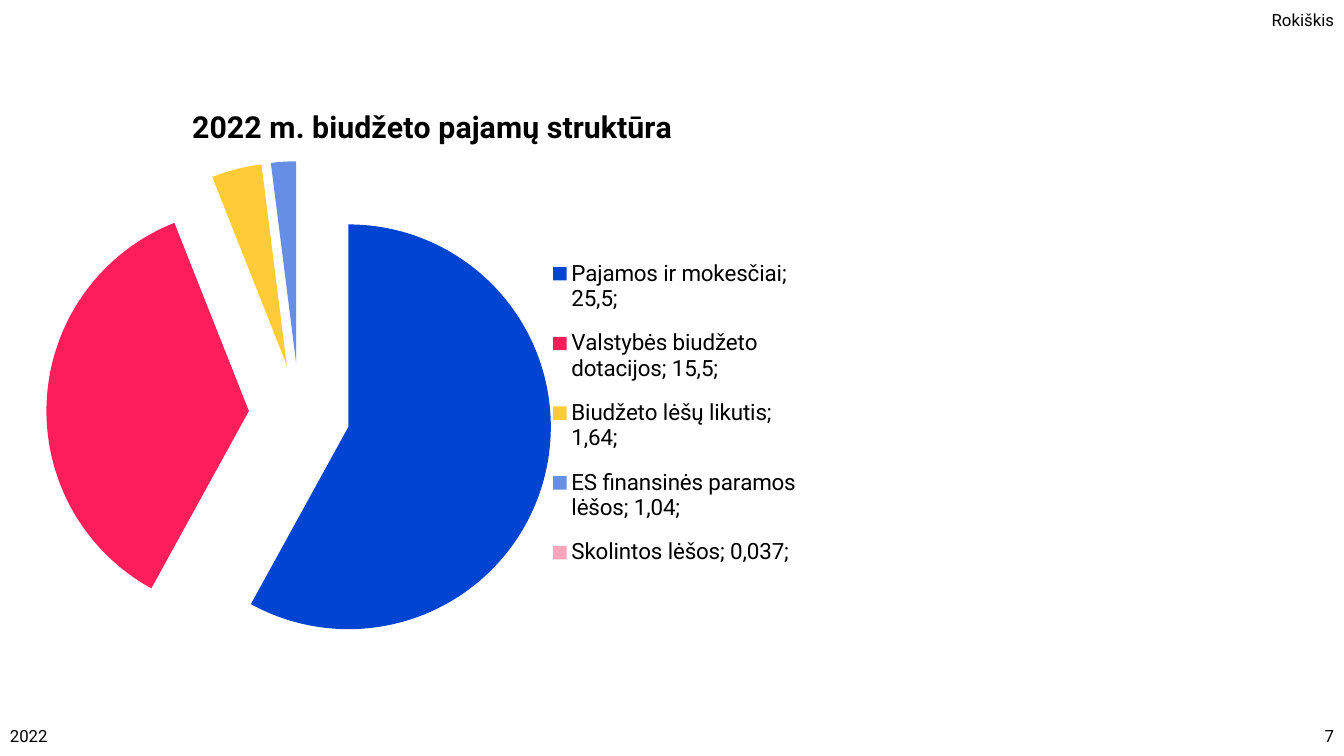
from dataclasses import dataclass

from lxml.etree import SubElement
from pptx import Presentation
from pptx.chart.chart import Chart
from pptx.chart.data import CategoryChartData
from pptx.dml.color import RGBColor
from pptx.enum.chart import XL_CHART_TYPE, XL_LEGEND_POSITION
from pptx.enum.text import MSO_ANCHOR, PP_ALIGN
from pptx.oxml.ns import qn
from pptx.slide import Slide
from pptx.util import Inches, Pt

COLORS = {
    "black": "000000",
    "blue": "0044D2",
    "red": "FF1D5A",
    "yellow": "FFCC37",
    "light_blue": "668EE4",
    "pink": "FFA4BD",
}
FONT = "Roboto"


@dataclass
class Income:
    label: str
    share: int
    color: str


@dataclass
class Box:
    left: float
    top: float
    width: float
    height: float


INCOMES = [
    Income("Pajamos ir mokesčiai; 25,5;", 58, "blue"),
    Income("Valstybės biudžeto dotacijos; 15,5;", 36, "red"),
    Income("Biudžeto lėšų likutis; 1,64;", 4, "yellow"),
    Income("ES finansinės paramos lėšos; 1,04;", 2, "light_blue"),
    Income("Skolintos lėšos; 0,037;", 0, "pink"),
]
CHART_BOX = Box(0, 0.83, 8.58, 5.93)
PIE_BOX = Box(0.46, 1.6, 5.02, 5.02)
LEGEND_BOX = Box(5.36, 2.4, 2.66, 3.4)


def rgb(name: str) -> RGBColor:
    return RGBColor.from_string(COLORS[name])


def style_font(font, size: float, name: str = FONT, bold: bool = False) -> None:
    font.name = name
    font.size = Pt(size)
    font.bold = bold
    font.color.rgb = rgb("black")


def add_text(slide: Slide, text: str, box: Box, *, size: float = 12,
             align: PP_ALIGN = PP_ALIGN.LEFT,
             anchor: MSO_ANCHOR = MSO_ANCHOR.MIDDLE) -> None:
    shape = slide.shapes.add_textbox(
        Inches(box.left), Inches(box.top), Inches(box.width), Inches(box.height))
    frame = shape.text_frame
    frame.word_wrap = True
    frame.vertical_anchor = anchor
    paragraph = frame.paragraphs[0]
    paragraph.alignment = align
    run = paragraph.add_run()
    run.text = text
    style_font(run.font, size)


def set_layout(parent, box: Box, before: str, inner: bool = False) -> None:
    for old_layout in parent.findall(qn("c:layout")):
        parent.remove(old_layout)
    layout = SubElement(parent, qn("c:layout"))
    parent.find(qn(before)).addprevious(layout)
    manual = SubElement(layout, qn("c:manualLayout"))
    settings = {
        "xMode": "edge",
        "yMode": "edge",
        "x": (box.left - CHART_BOX.left) / CHART_BOX.width,
        "y": (box.top - CHART_BOX.top) / CHART_BOX.height,
        "w": box.width / CHART_BOX.width,
        "h": box.height / CHART_BOX.height,
    }
    if inner:
        settings = {"layoutTarget": "inner"} | settings
    for tag, value in settings.items():
        SubElement(manual, qn(f"c:{tag}")).set("val", str(value))


def add_pie(slide: Slide) -> Chart:
    data = CategoryChartData()
    data.categories = [income.label for income in INCOMES]
    data.add_series("Series 1", [income.share for income in INCOMES])
    chart = slide.shapes.add_chart(
        XL_CHART_TYPE.PIE, Inches(CHART_BOX.left), Inches(CHART_BOX.top),
        Inches(CHART_BOX.width), Inches(CHART_BOX.height), data).chart
    style_font(chart.font, 18, "Arial")

    chart.has_title = True
    title = chart.chart_title.text_frame.paragraphs[0].add_run()
    title.text = "2022 m. biudžeto pajamų struktūra"
    style_font(title.font, 21.6, bold=True)

    chart.has_legend = True
    chart.legend.position = XL_LEGEND_POSITION.RIGHT
    chart.legend.include_in_layout = False
    style_font(chart.legend.font, 16)

    series = chart.plots[0].series[0]
    for index, income in enumerate(INCOMES):
        fill = series.points[index].format.fill
        fill.solid()
        fill.fore_color.rgb = rgb(income.color)
    explosion = SubElement(series._element, qn("c:explosion"))
    explosion.set("val", "25")
    series._element.find(qn("c:dPt")).addprevious(explosion)

    plot_area = chart.plots[0]._element.getparent()
    set_layout(plot_area, PIE_BOX, "c:pieChart", inner=True)
    set_layout(chart.legend._element, LEGEND_BOX, "c:overlay")
    return chart


def main() -> None:
    """Build the budget income slide."""
    presentation = Presentation()
    presentation.slide_width = Inches(13.33)
    presentation.slide_height = Inches(7.5)
    slide = presentation.slides.add_slide(presentation.slide_layouts[6])
    add_text(slide, "Rokiškis", Box(10.91, 0.05, 2.42, 0.3),
             align=PP_ALIGN.RIGHT, anchor=MSO_ANCHOR.TOP)
    add_text(slide, "2022", Box(0, 7.1, 3, 0.4))
    add_text(slide, "7", Box(10.33, 7.1, 3, 0.4), align=PP_ALIGN.RIGHT)
    add_pie(slide)
    presentation.save("out.pptx")


if __name__ == "__main__":
    main()
